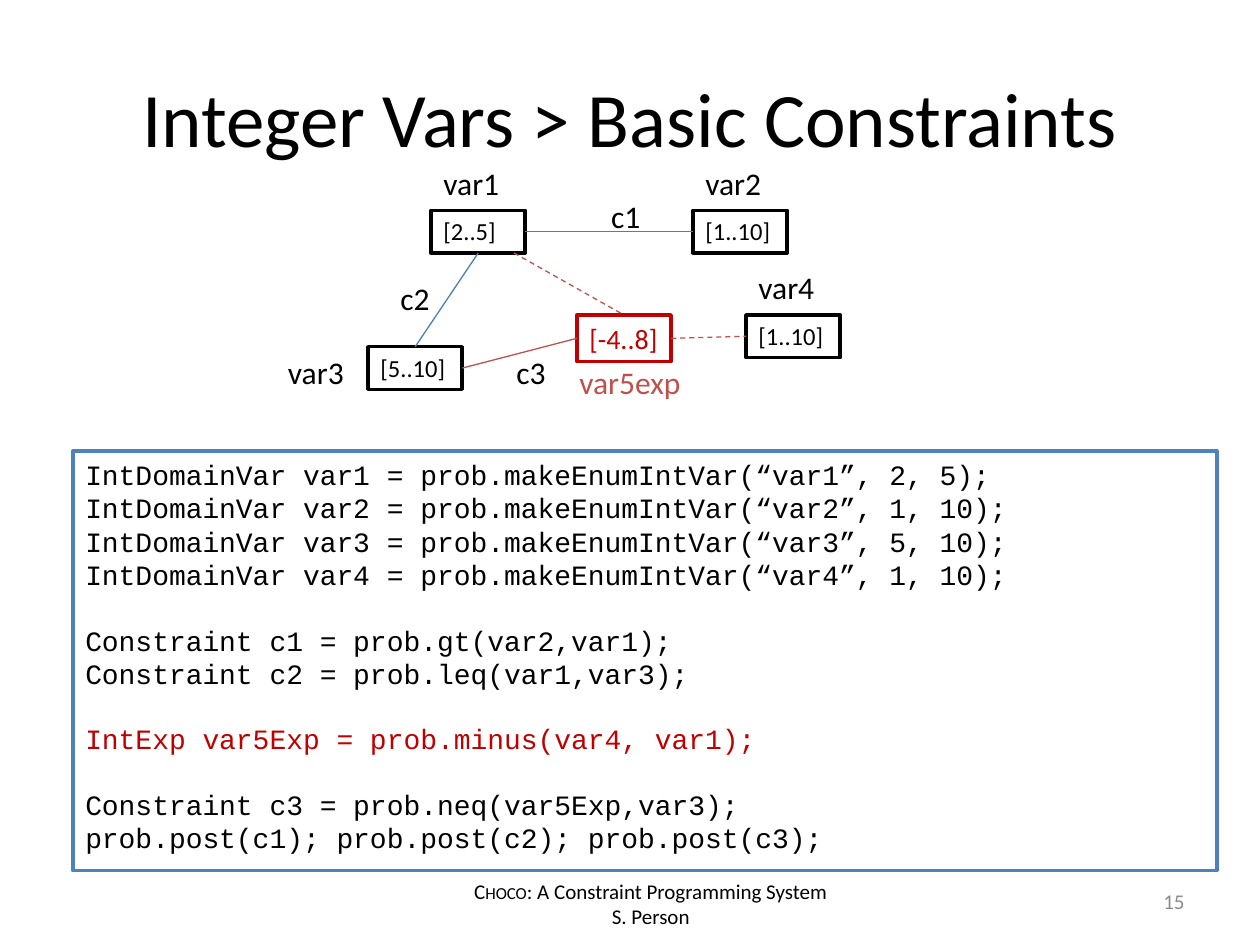
import pptx
import pptx.util
import pptx.dml.color
import pptx.enum.dml
import pptx.enum.shapes
import pptx.enum.text
import lxml.etree

Cm = pptx.util.Cm
Pt = pptx.util.Pt
ALIGN = pptx.enum.text.PP_ALIGN
ANCHOR = pptx.enum.text.MSO_ANCHOR
DRAWING_NAMESPACE = "http://schemas.openxmlformats.org/drawingml/2006/main"

COLORS = {
    "black": "000000",
    "white": "FFFFFF",
    "gray": "8C8C8C",
    "frame": "4F81BD",
    "blue": "4B7EBC",
    "red": "C0504D",
    "dark red": "C00000",
}
TOP, LEFT, BOTTOM, RIGHT = range(4)  # connection sites of a rectangle
LABEL_HEIGHT = 1.02

# Each block is set off from the one before by one line of space.
CODE_BLOCKS = [
    ("black", [
        f"IntDomainVar var{number} = prob.makeEnumIntVar(“var{number}”, {low}, {high});"
        for number, low, high in [(1, 2, 5), (2, 1, 10), (3, 5, 10), (4, 1, 10)]
    ]),
    ("black", ["Constraint c1 = prob.gt(var2,var1);",
               "Constraint c2 = prob.leq(var1,var3);"]),
    ("dark red", ["IntExp var5Exp = prob.minus(var4, var1);"]),
    ("black", ["Constraint c3 = prob.neq(var5Exp,var3);",
               "prob.post(c1); prob.post(c2); prob.post(c3);"]),
]

# name: (left, top, height, domain, text size, color)
DOMAINS = {
    "var4": (15.04, 6.35, 0.86, "[1..10]", 14, "black"),
    "var1": (8.69, 4.24, 0.86, "[2..5]", 14, "black"),
    "var3": (7.42, 6.99, 0.86, "[5..10]", 14, "black"),
    "var2": (13.97, 4.24, 0.86, "[1..10]", 14, "black"),
    "var5exp": (11.63, 6.35, 0.94, "[-4..8]", 16, "dark red"),
}

# (text, left, top, width, color, alignment)
LABELS = [
    ("c1", 12.07, 3.84, 1.27, "black", ALIGN.LEFT),
    ("c2", 7.82, 5.51, 1.27, "black", ALIGN.LEFT),
    ("c3", 10.16, 6.99, 1.27, "black", ALIGN.LEFT),
    ("var1", 8.69, 3.18, 1.9, "black", ALIGN.LEFT),
    ("var2", 13.97, 3.18, 1.9, "black", ALIGN.LEFT),
    ("var3", 5.28, 6.99, 1.9, "black", ALIGN.RIGHT),
    ("var4", 15.04, 5.28, 1.9, "black", ALIGN.LEFT),
    ("var5exp", 11.43, 7.19, 2.75, "red", ALIGN.LEFT),
]


class SlideBuilder:
    def __init__(self, slide, font="Calibri", code_font="Courier New"):
        self.slide = slide
        self.font = font
        self.code_font = code_font

    def color(self, name):
        return pptx.dml.color.RGBColor.from_string(COLORS[name])

    def set_text(self, paragraph, text, size, color, alignment=ALIGN.LEFT, font=None):
        paragraph.text = text
        paragraph.alignment = alignment
        paragraph.font.name = font or self.font
        paragraph.font.size = Pt(size)
        paragraph.font.color.rgb = self.color(color)

    def text(self, text, left, top, width, height, size, color="black",
             alignment=ALIGN.LEFT, anchor=ANCHOR.TOP):
        shape = self.slide.shapes.add_textbox(Cm(left), Cm(top), Cm(width), Cm(height))
        frame = shape.text_frame
        frame.word_wrap = True
        frame.vertical_anchor = anchor
        self.set_text(frame.paragraphs[0], text, size, color, alignment)
        return frame

    def box(self, left, top, width, height, line_color):
        shape = self.slide.shapes.add_shape(
            pptx.enum.shapes.MSO_SHAPE.RECTANGLE, Cm(left), Cm(top), Cm(width), Cm(height))
        shape.shadow.inherit = False
        shape.fill.solid()
        shape.fill.fore_color.rgb = self.color("white")
        shape.line.color.rgb = self.color(line_color)
        shape.line.width = Pt(2)
        shape.text_frame.word_wrap = True
        shape.text_frame.vertical_anchor = ANCHOR.TOP
        return shape

    def domain(self, left, top, height, text, size, color):
        shape = self.box(left, top, 1.9, height, color)
        self.set_text(shape.text_frame.paragraphs[0], text, size, color)
        return shape

    def code(self, blocks, left, top, width, height, size=16):
        frame = self.box(left, top, width, height, "frame").text_frame
        paragraph = frame.paragraphs[0]
        for block_index, (color, lines) in enumerate(blocks):
            for line_index, line in enumerate(lines):
                if block_index or line_index:
                    paragraph = frame.add_paragraph()
                self.set_text(paragraph, line, size, color, font=self.code_font)
                if block_index and line_index == 0:
                    paragraph.space_before = Pt(18.1)

    def link(self, start, end, color, dashed=False):
        """Join two (shape, site) ends; the start may be a (left, top) point."""
        connector = self.slide.shapes.add_connector(
            pptx.enum.shapes.MSO_CONNECTOR.STRAIGHT, 0, 0, 0, 0)
        if isinstance(start[0], float):
            connector.begin_x, connector.begin_y = Cm(start[0]), Cm(start[1])
        else:
            connector.begin_connect(*start)
        connector.end_connect(*end)
        connector.line.color.rgb = self.color(color)
        connector.line.width = Pt(0.75)
        if dashed:
            connector.line.dash_style = pptx.enum.dml.MSO_LINE.DASH
        properties = connector._element.spPr
        lxml.etree.SubElement(properties, f"{{{DRAWING_NAMESPACE}}}effectLst")

    def footer(self, name, subtitle, author, left, top, width, height):
        frame = self.text(name, left, top, width, height, 12, alignment=ALIGN.CENTER)
        paragraph = frame.paragraphs[0]
        paragraph.runs[0]._r.get_or_add_rPr().set("cap", "small")
        paragraph.add_run().text = subtitle
        self.set_text(frame.add_paragraph(), author, 12, "black", ALIGN.CENTER)


def main():
    presentation = pptx.Presentation()
    presentation.slide_width = Cm(25.4)
    presentation.slide_height = Cm(19.05)
    builder = SlideBuilder(presentation.slides.add_slide(presentation.slide_layouts[6]))

    builder.footer("Choco", ": A Constraint Programming System", "S. Person",
                   8.89, 17.58, 8.46, 1.27)
    builder.text("Integer Vars > Basic Constraints", 1.27, 0.76, 22.86, 3.18, 44,
                 alignment=ALIGN.CENTER, anchor=ANCHOR.MIDDLE)
    builder.text("15", 18.21, 17.65, 5.92, 1.02, 12, "gray", ALIGN.RIGHT, ANCHOR.MIDDLE)
    builder.code(CODE_BLOCKS, 1.47, 9.09, 23.06, 8.46)

    boxes = {name: builder.domain(*values) for name, values in DOMAINS.items()}
    expression = boxes["var5exp"]
    builder.link((boxes["var1"], RIGHT), (boxes["var2"], LEFT), "blue")
    builder.link((boxes["var1"], BOTTOM), (boxes["var3"], TOP), "blue")
    builder.link((boxes["var3"], RIGHT), (expression, LEFT), "red")
    builder.link((10.36, 5.1), (expression, TOP), "red", dashed=True)
    builder.link((expression, RIGHT), (boxes["var4"], LEFT), "red", dashed=True)

    for text, left, top, width, color, alignment in LABELS:
        builder.text(text, left, top, width, LABEL_HEIGHT, 18, color, alignment)

    presentation.save("out.pptx")


if __name__ == "__main__":
    main()
